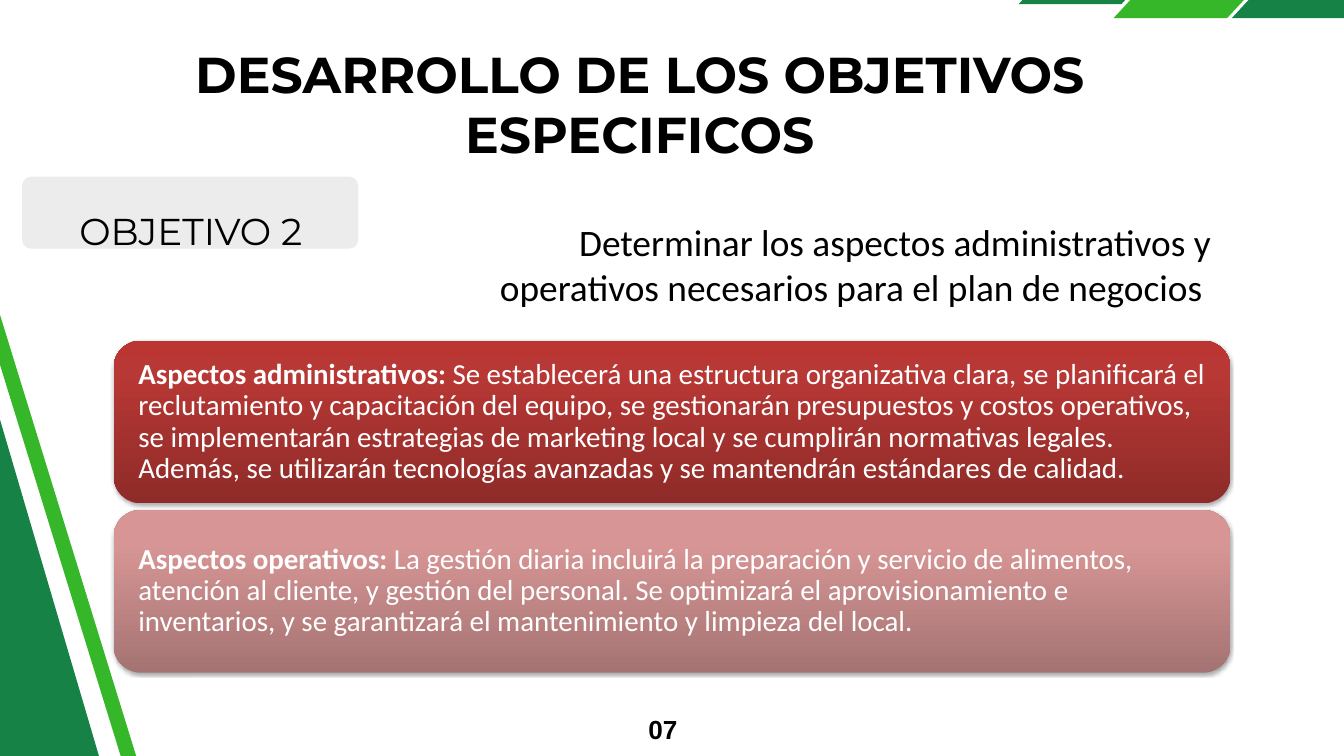
from pptx import Presentation
from pptx.dml.color import RGBColor
from pptx.enum import shapes, text
from pptx.oxml import parse_xml
from pptx.oxml.ns import nsdecls
from pptx.util import Inches, Pt

DARK, LIGHT = "168246", "35B729"
ALIGN = text.PP_ALIGN


def color(code):
    return RGBColor.from_string(code)


def style(run, face, size, ink, bold=False):
    run.font.name = face
    run.font.size = Pt(size)
    run.font.bold = bold
    run.font.color.rgb = color(ink)


def pad(frame, inset):
    frame.word_wrap = True
    frame.margin_left = frame.margin_right = Inches(inset)
    frame.margin_top = frame.margin_bottom = Inches(inset)


def add_text(slide, box, words, face, size, align, bold=False, lead=None):
    frame = slide.shapes.add_textbox(*map(Inches, box)).text_frame
    pad(frame, 0)
    frame.text = words
    para = frame.paragraphs[0]
    para.alignment = align
    if lead:
        para.line_spacing = Pt(lead)
    style(para.runs[0], face, size, "000000", bold)


def add_band(slide, points, fill):
    spots = [(Inches(x), Inches(y)) for x, y in points]
    pen = slide.shapes.build_freeform(*spots[0])
    pen.add_line_segments(spots[1:], close=True)
    band = pen.convert_to_shape()
    band.shadow.inherit = False
    band.fill.solid()
    band.fill.fore_color.rgb = color(fill)
    band.line.fill.background()


def add_round(slide, box, curve):
    shape = slide.shapes.add_shape(
        shapes.MSO_SHAPE.ROUNDED_RECTANGLE, *map(Inches, box))
    shape.adjustments[0] = curve
    shape.shadow.inherit = False
    shape.line.fill.background()
    return shape


def shade(shape, tones):
    """Three-tone gradient rising from the bottom, with a soft shadow."""
    stops = "".join(
        f'<a:gs pos="{pos * 1000}"><a:srgbClr val="{tone}"/></a:gs>'
        for pos, tone in zip((0, 80, 100), tones))
    props = shape.fill._xPr
    props.find("{*}prstGeom").addnext(parse_xml(
        f'<a:gradFill {nsdecls("a")} rotWithShape="1"><a:gsLst>{stops}</a:gsLst>'
        '<a:lin ang="16200000" scaled="0"/></a:gradFill>'))
    props.find("{*}effectLst").append(parse_xml(
        f'<a:outerShdw {nsdecls("a")} blurRad="{Pt(3.1)}" dist="{Pt(1.8)}" '
        'dir="5400000" rotWithShape="0"><a:srgbClr val="000000">'
        '<a:alpha val="35000"/></a:srgbClr></a:outerShdw>'))


def add_card(slide, top, tones, head, body):
    card = add_round(slide, (1.69, top, 16.62, 2.42), 0.167)
    shade(card, tones)
    frame = card.text_frame
    pad(frame, 0.25)
    frame.vertical_anchor = text.MSO_ANCHOR.MIDDLE
    para = frame.paragraphs[0]
    para.alignment = ALIGN.LEFT
    para.line_spacing = 0.9
    for words, bold in ((head, True), (body, False)):
        run = para.add_run()
        run.text = words
        style(run, "Calibri", 31, "FFFFFF", bold)


def main():
    deck = Presentation()
    deck.slide_width, deck.slide_height = Inches(20), Inches(11.25)
    slide = deck.slides.add_slide(deck.slide_layouts[6])

    # Slanted bands at the top right
    add_band(slide, [(16.01, -0.86), (17.53, -0.86), (16.69, 0.06), (15.16, 0.06)], DARK)
    for left, fill in ((16.57, LIGHT), (18.33, DARK)):
        add_band(slide, [(left + 1.23, -1.06), (left + 2.92, -1.06),
                         (left + 1.69, 0.27), (left, 0.27)], fill)

    # Long bands at the lower left
    add_band(slide, [(-1.97, 17.32), (-6.6, 1.57), (-1.79, 0.16), (2.84, 15.9)], DARK)
    add_band(slide, [(3.44, 16.58), (-1.4, 0.89), (-1.19, 0.83), (3.65, 16.51)], LIGHT)

    # Page number
    add_text(slide, (9.52, 10.54, 0.56, 0.5), "07", "Arial", 28,
             ALIGN.RIGHT, bold=True, lead=39.2)

    # Objective label and title
    tab = add_round(slide, (0.33, 2.63, 5, 1.07), 0.12)
    tab.fill.solid()
    tab.fill.fore_color.rgb = color("EDECED")
    add_text(slide, (0.86, 2.23, 3.96, 1.32), "OBJETIVO 2", "Montserrat", 40,
             ALIGN.CENTER, lead=110)
    add_text(slide, (2.56, 0.64, 13.92, 1.82),
             "DESARROLLO DE LOS OBJETIVOS ESPECIFICOS", "Montserrat", 54,
             ALIGN.CENTER, bold=True)

    # Aspect cards
    cards = [
        (("8E2B28", "B83835", "BB3632"), "Aspectos administrativos:",
         " Se establecerá una estructura organizativa clara, se planificará el "
         "reclutamiento y capacitación del equipo, se gestionarán presupuestos y "
         "costos operativos, se implementarán estrategias de marketing local y se "
         "cumplirán normativas legales. Además, se utilizarán tecnologías avanzadas "
         "y se mantendrán estándares de calidad."),
        (("A57373", "D79695", "D99594"), "Aspectos operativos:",
         " La gestión diaria incluirá la preparación y servicio de alimentos, "
         "atención al cliente, y gestión del personal. Se optimizará el "
         "aprovisionamiento e inventarios, y se garantizará el mantenimiento y "
         "limpieza del local."),
    ]
    for row, (tones, head, body) in enumerate(cards):
        add_card(slide, 5.07 + row * 2.52, tones, head, body)

    # Objective statement
    add_text(slide, (7.08, 3.26, 10.94, 3.16),
             "Determinar los aspectos administrativos y operativos necesarios "
             "para el plan de negocios ", "Calibri", 40, ALIGN.RIGHT)

    deck.save("out.pptx")


if __name__ == "__main__":
    main()
